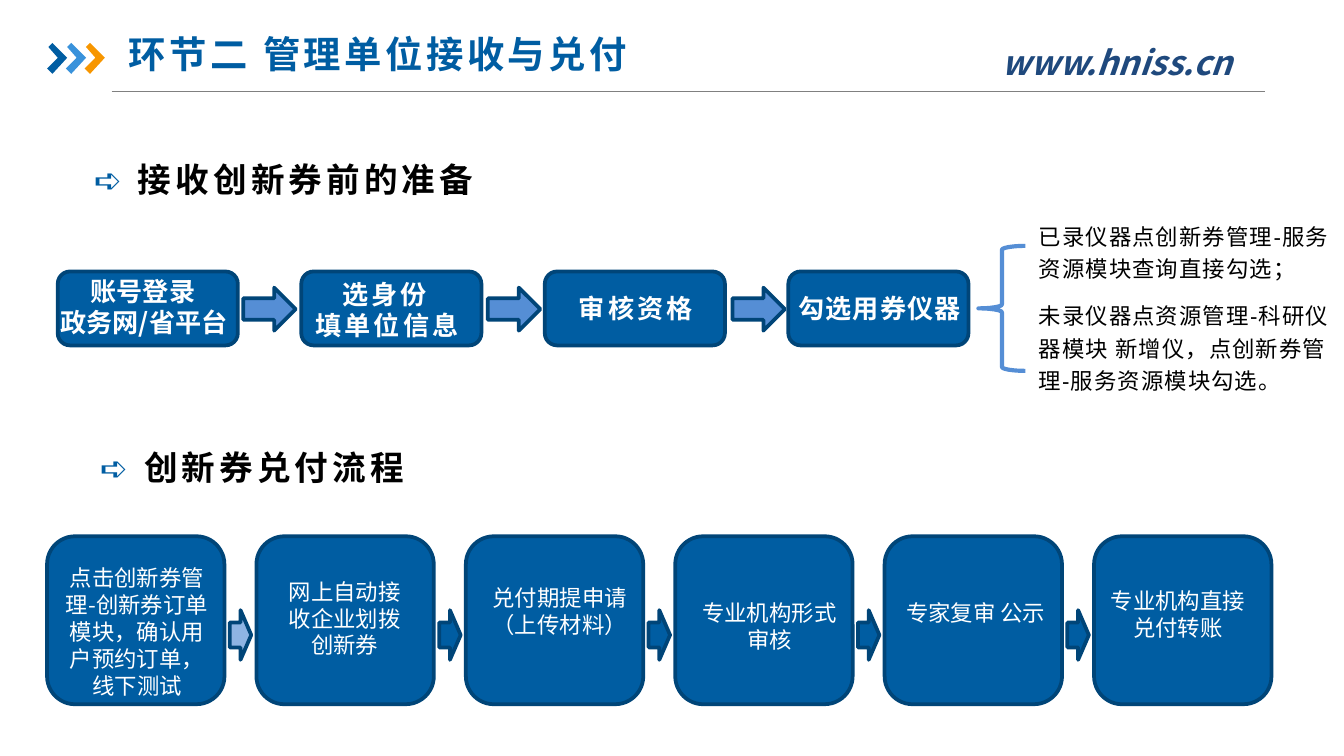
from collections import namedtuple
from dataclasses import dataclass

from lxml.etree import SubElement
from pptx import Presentation
from pptx.dml.color import RGBColor
from pptx.enum.shapes import MSO_CONNECTOR, MSO_SHAPE
from pptx.enum.text import MSO_ANCHOR, PP_ALIGN
from pptx.oxml.ns import qn
from pptx.util import Inches, Pt

Box = namedtuple("Box", "left top width height")


@dataclass(frozen=True)
class Theme:
    font: str = "Noto Sans CJK SC"
    latin: str = "Arial"
    primary: str = "005DA2"
    outline: str = "004578"
    accent: str = "558ED5"
    pale: str = "8EB4E3"
    chevrons: tuple = ("005DA2", "3992DB", "F79600")
    address: str = "1F497D"
    rule: str = "808080"
    black: str = "000000"
    white: str = "FFFFFF"
    title: int = 20
    heading: int = 18
    step: int = 14
    body: int = 12


THEME = Theme()
SLIDE_WIDTH = Inches(10)
SLIDE_HEIGHT = SLIDE_WIDTH * 9 // 16
COLUMN = SLIDE_WIDTH / 100
ROW = SLIDE_HEIGHT / 56.25
NORMAL_INSETS = (1, 0.5)


def columns(count):
    return round(count * COLUMN)


def rows(count):
    return round(count * ROW)


def inside(box, left, top, width, height):
    """Box whose position is counted from the corner of another box."""
    return Box(box.left + left, box.top + top, width, height)


def place(box):
    return columns(box.left), rows(box.top), columns(box.width), rows(box.height)


def color(value):
    return RGBColor.from_string(value)


def add_text(slide, box, paragraphs, size=THEME.body, ink=THEME.white, font=THEME.font,
             bold=False, italic=False, spacing=0, align=PP_ALIGN.LEFT,
             anchor=MSO_ANCHOR.TOP, insets=NORMAL_INSETS, line_spacing=None,
             space_after=None, first_indent=0):
    """Each paragraph is a string or a list of (text, ink) runs."""
    frame = slide.shapes.add_textbox(*place(box)).text_frame
    frame.word_wrap = True
    frame.vertical_anchor = anchor
    frame.margin_left = frame.margin_right = columns(insets[0])
    frame.margin_top = frame.margin_bottom = rows(insets[1])
    for index, content in enumerate(paragraphs):
        paragraph = frame.add_paragraph() if index else frame.paragraphs[0]
        paragraph.alignment = align
        if line_spacing:
            paragraph.line_spacing = line_spacing
        if space_after:
            paragraph.space_after = Pt(space_after)
        if first_indent and index == 0:
            paragraph._p.get_or_add_pPr().set("marL", str(columns(first_indent)))
        runs = [(content, ink)] if isinstance(content, str) else content
        for text, run_ink in runs:
            run = paragraph.add_run()
            run.text = text
            run.font.name = font
            run.font.size = Pt(size)
            run.font.bold = bold
            run.font.italic = italic
            run.font.color.rgb = color(run_ink)
            properties = run._r.get_or_add_rPr()
            if spacing:
                properties.set("spc", str(round(spacing * 100)))
            SubElement(properties, qn("a:ea")).set("typeface", THEME.font)


def add_shape(slide, kind, box, fill=None, line=THEME.outline, weight=2):
    shape = slide.shapes.add_shape(kind, *place(box))
    shape.shadow.inherit = False
    if fill:
        shape.fill.solid()
        shape.fill.fore_color.rgb = color(fill)
    else:
        shape.fill.background()
    shape.line.color.rgb = color(line)
    shape.line.width = Pt(weight)


def add_chevron(slide, left, top, fill):
    outline = [(0.1, 0.3), (0.4, 0), (1.5, 1.1), (0.4, 2.3), (0, 1.9), (0.8, 1.1)]
    points = [(columns(left + x), rows(top + y)) for x, y in outline]
    builder = slide.shapes.build_freeform(*points[0])
    builder.add_line_segments(points[1:], close=True)
    shape = builder.convert_to_shape()
    shape.shadow.inherit = False
    shape.fill.solid()
    shape.fill.fore_color.rgb = color(fill)
    shape.line.fill.background()


def add_header(slide, box):
    rule_top = rows(box.top + box.height)
    rule = slide.shapes.add_connector(
        MSO_CONNECTOR.STRAIGHT, columns(box.left + 4.8), rule_top,
        columns(box.left + box.width), rule_top)
    rule.line.color.rgb = color(THEME.rule)
    rule.line.width = Pt(0.75)
    SubElement(rule._element.spPr, qn("a:effectLst"))
    for index, fill in enumerate(THEME.chevrons):
        add_chevron(slide, box.left + 1.4 * index, box.top + 1.1, fill)
    add_text(slide, inside(box, 67.8, 0.5, 23.6, 4), ["www.hniss.cn"], size=THEME.heading,
             ink=THEME.address, bold=True, italic=True, align=PP_ALIGN.CENTER)
    add_text(slide, inside(box, 5.6, 0, 90, 5), ["环节二 管理单位接收与兑付"],
             size=THEME.title, ink=THEME.primary, bold=True, spacing=1.8, insets=(0.5, 0.2))


def add_heading(slide, box, text):
    add_text(slide, box, [[("➪ ", THEME.primary), (text, THEME.black)]], size=THEME.heading,
             bold=True, spacing=2.2, align=PP_ALIGN.CENTER, anchor=MSO_ANCHOR.MIDDLE,
             insets=(0.7, 0.4))


def add_preparation(slide, box):
    pitch = 18.12
    add_heading(slide, inside(box, 0.9, 0, 33.4, 6.6), "接收创新券前的准备")
    for index in range(4):
        add_shape(slide, MSO_SHAPE.ROUNDED_RECTANGLE,
                  inside(box, 0.8 + pitch * index, 10.2, 13.4, 5.5), THEME.primary)
    steps = [
        ((0, 10, 17.8, 5.7), ["账号登录", "政务网/省平台"],
         dict(font=THEME.font, first_indent=2.25)),
        ((19, 10.2, 14.2, 5.7), ["选身份", "填单位信息"], dict(spacing=1.6, first_indent=2)),
        ((38.6, 11.3, 11.6, 3.4), ["审核资格"], dict(spacing=1.6)),
        ((54.9, 11.3, 14.5, 3.4), ["勾选用券仪器"], dict(spacing=0.6)),
    ]
    for area, lines, style in steps:
        add_text(slide, inside(box, *area), lines,
                 **{"size": THEME.step, "font": THEME.latin, "bold": True, **style})
    for index in range(3):
        add_shape(slide, MSO_SHAPE.RIGHT_ARROW,
                  inside(box, 14.6 + 18.2 * index, 11.4, 3.9, 3.2), THEME.accent)
    add_shape(slide, MSO_SHAPE.LEFT_BRACE, inside(box, 69.3, 8.3, 3.5, 9.3),
              line=THEME.accent, weight=2.25)
    notes = ["已录仪器点创新券管理-服务资源模块查询直接勾选；",
             "未录仪器点资源管理-科研仪器模块 新增仪，点创新券管理-服务资源模块勾选。"]
    add_text(slide, inside(box, 72.8, 2.7, 23.7, 20.1), notes, ink=THEME.black,
             font=THEME.latin, spacing=0.6, anchor=MSO_ANCHOR.MIDDLE,
             line_spacing=1.2, space_after=8)


def add_payout(slide, box):
    pitch = 15.58
    add_heading(slide, inside(box, 1.6, 0, 27.3, 5.3), "创新券兑付流程")
    steps = [
        ((0.2, 9.4, 13, 9.2), ["点击创新券管理-创新券订单模块，确认用户预约订单，线下测试"]),
        ((16.5, 10.4, 11.3, 7.4), ["网上自动接收企业划拨创新券"]),
        ((31.2, 10.9, 13.9, 5.2), ["兑付期提申请（上传材料）"]),
        ((45.2, 12, 17.1, 5), ["专业机构形式", "审核"]),
        ((62.5, 12, 13.2, 3), ["专家复审 公示"]),
        ((78.1, 11.1, 12.1, 5), ["专业机构直接兑付转账"]),
    ]
    for index, (area, lines) in enumerate(steps):
        left = pitch * index
        add_shape(slide, MSO_SHAPE.ROUNDED_RECTANGLE,
                  inside(box, left, 7.8, 13.2, 12.5), THEME.primary)
        add_text(slide, inside(box, *area), lines, align=PP_ALIGN.CENTER)
        if index < len(steps) - 1:
            add_shape(slide, MSO_SHAPE.RIGHT_ARROW, inside(box, left + 13.6, 13.3, 1.6, 3.7),
                      THEME.primary if index else THEME.pale)


def main():
    presentation = Presentation()
    presentation.slide_width, presentation.slide_height = SLIDE_WIDTH, SLIDE_HEIGHT
    slide = presentation.slides.add_slide(presentation.slide_layouts[6])
    add_header(slide, Box(3.5, 2.1, 90.6, 4.7))
    add_preparation(slide, Box(3.5, 10, 96.5, 22.8))
    add_payout(slide, Box(3.5, 32.1, 91.1, 20.3))
    presentation.save("out.pptx")


if __name__ == "__main__":
    main()
